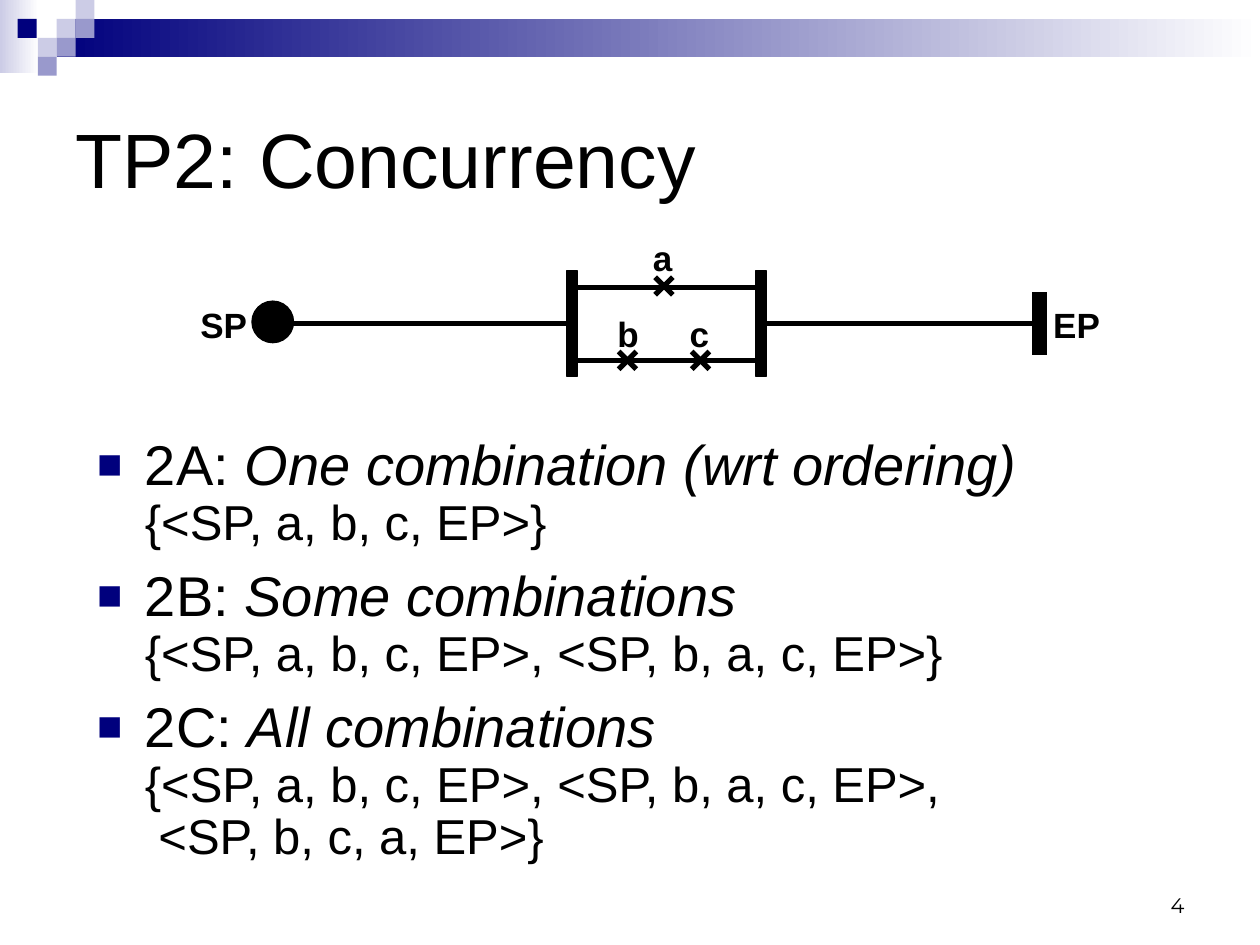
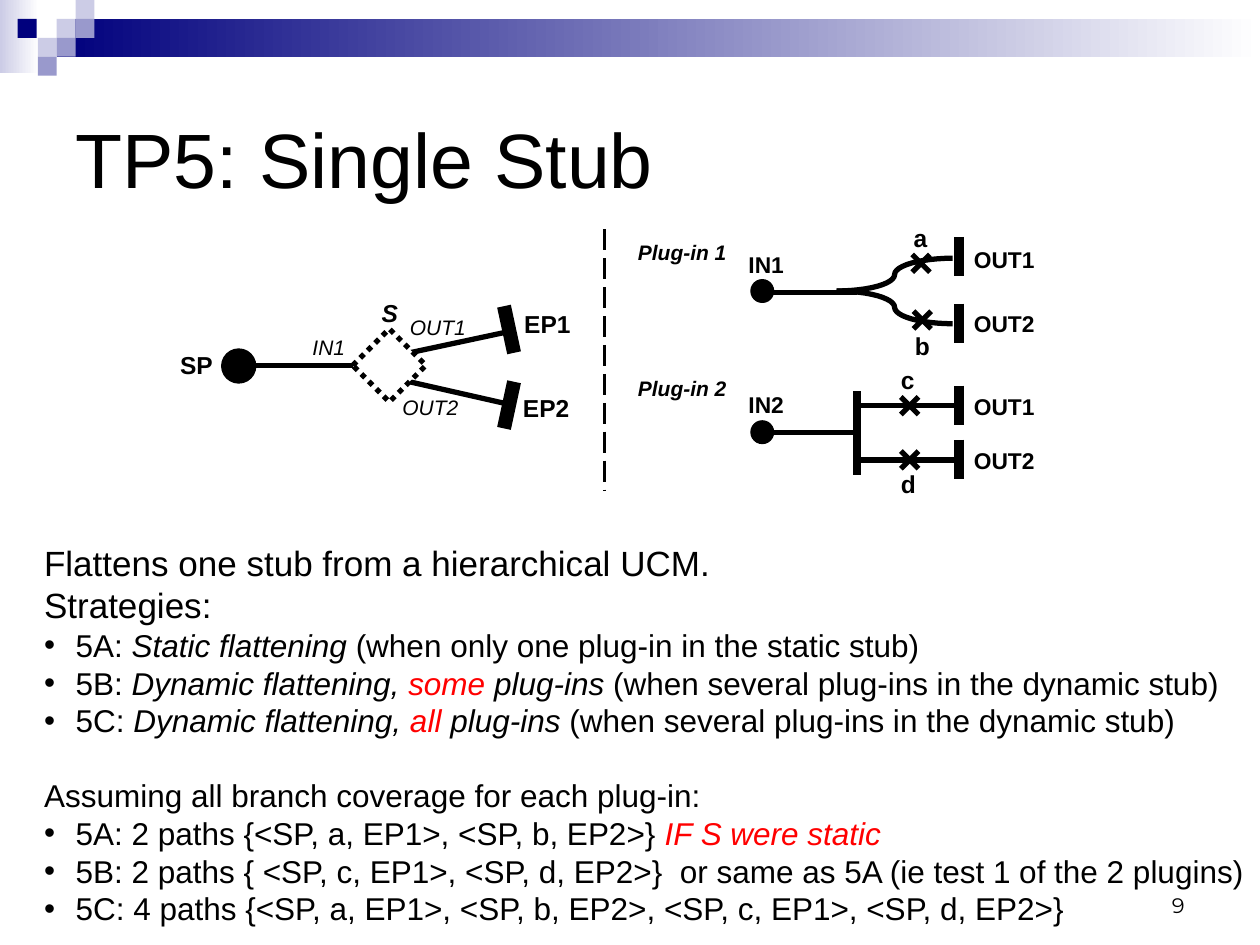
from math import cos, pi, sin

from lxml import etree
from pptx import Presentation
from pptx.dml.color import RGBColor
from pptx.enum.dml import MSO_LINE
from pptx.enum.shapes import MSO_CONNECTOR, MSO_SHAPE
from pptx.enum.text import MSO_ANCHOR, MSO_AUTO_SIZE, PP_ALIGN
from pptx.oxml.ns import qn
from pptx.util import Inches, Pt

NAVY, LILAC, LAVENDER = "00007D", "9999CC", "CCCCE6"
BLACK, WHITE, RED = "000000", "FFFFFF", "FF0000"


def paint(shape, fill, line=None, width=0.75):
    """Fill with one hex colour, or with a pair as a left-to-right gradient."""
    shape.shadow.inherit = False
    if isinstance(fill, tuple):
        shape.fill.gradient()
        shape.fill.gradient_angle = 0
        for stop, color in zip(shape.fill.gradient_stops, fill):
            stop.color.rgb = RGBColor.from_string(color)
    elif fill:
        shape.fill.solid()
        shape.fill.fore_color.rgb = RGBColor.from_string(fill)
    else:
        shape.fill.background()
    if line:
        shape.line.color.rgb = RGBColor.from_string(line)
        shape.line.width = Pt(width)
    else:
        shape.line.fill.background()


def draw_line(slide, x1, y1, x2, y2, width=3):
    connector = slide.shapes.add_connector(
        MSO_CONNECTOR.STRAIGHT, Inches(x1), Inches(y1), Inches(x2), Inches(y2))
    connector.line.color.rgb = RGBColor.from_string(BLACK)
    connector.line.width = Pt(width)
    etree.SubElement(connector.element.spPr, qn("a:effectLst"))
    return connector


presentation = Presentation()
presentation.slide_width, presentation.slide_height = Inches(10), Inches(7.5)
layout = presentation.slide_layouts[1]
concurrency = presentation.slides.add_slide(layout)
stub = presentation.slides.add_slide(layout)

# Band and squares, moved to the slide master
band = [
    (0, 0, 0.31, 0.58, (LAVENDER, WHITE)),
    (0.45, 0.15, 9.55, 0.3, (NAVY, WHITE)),
]
squares = [
    (0.45, 0.15, LAVENDER), (0.6, 0, LAVENDER), (0.6, 0.15, LILAC), (0.3, 0.3, LAVENDER),
    (0.14, 0.15, NAVY), (0.45, 0.3, LILAC), (0.3, 0.45, LILAC),
]
band += [(left, top, 0.15, 0.15, color) for left, top, color in squares]
master_tree = presentation.slide_master.shapes.element
for position, (left, top, width, height, fill) in enumerate(band, 2):
    shape = concurrency.shapes.add_shape(
        MSO_SHAPE.RECTANGLE, Inches(left), Inches(top), Inches(width), Inches(height))
    paint(shape, fill)
    master_tree.insert(position, shape.element)

# Titles and page numbers
for slide, title_text, number in [(concurrency, "TP2: Concurrency", "4"),
                                  (stub, "TP5: Single Stub", "9")]:
    title = slide.shapes.title
    title.left, title.top, title.width, title.height = (
        Inches(0.5), Inches(0.5), Inches(9), Inches(1.5))
    page = slide.shapes.add_textbox(Inches(7.17), Inches(6.83), Inches(2.33), Inches(0.5))
    for box, text, size, font, anchor, align in [
        (title, title_text, 44, "Arial", MSO_ANCHOR.MIDDLE, PP_ALIGN.LEFT),
        (page, number, 12, "Montserrat", MSO_ANCHOR.BOTTOM, PP_ALIGN.RIGHT),
    ]:
        frame = box.text_frame
        frame.text = text
        frame.word_wrap = True
        frame.auto_size = MSO_AUTO_SIZE.NONE
        frame.vertical_anchor = anchor
        paragraph = frame.paragraphs[0]
        paragraph.alignment = align
        paragraph.font.size = Pt(size)
        paragraph.font.name = font

# Lists: each paragraph is (bullet, size, space before, runs);
# each run is (text, style, own size), with styles "i" for italic and "r" for red
combinations = [
    ("■", 28, before, [(label, "", 32), (name, "i", 32), ("\n" + paths, "", None)])
    for before, label, name, paths in [
        (6, "2A: ", "One combination (wrt ordering)", "{<SP, a, b, c, EP>}"),
        (10, "2B: ", "Some combinations", "{<SP, a, b, c, EP>, <SP, b, a, c, EP>}"),
        (10, "2C: ", "All combinations",
         "{<SP, a, b, c, EP>, <SP, b, a, c, EP>,\n <SP, b, c, a, EP>}"),
    ]
]
strategies = [
    (None, 20, 0, [("Flattens one stub from a hierarchical UCM.", "", None)]),
    (None, 20, 0, [("Strategies:", "", None)]),
    ("•", 18, 0, [("5A: ", "", None), ("Static flattening", "i", None),
                  (" (when only one plug-in in the static stub)", "", None)]),
]
for label, amount in [("5B: ", "some "), ("5C: ", "all ")]:
    strategies.append(("•", 18, 0, [
        (label, "", None), ("Dynamic flattening, ", "i", None),
        (amount, "ir", None), ("plug-ins", "i", None),
        (" (when several plug-ins in the dynamic stub)", "", None)]))
strategies += [
    (None, 18, 21, [("Assuming all branch coverage for each plug-in:", "", None)]),
    ("•", 18, 0, [("5A: 2 paths {<SP, a, EP1>, <SP, b, EP2>} ", "", None),
                  ("IF S were static", "ir", None)]),
    ("•", 18, 0, [("5B: 2 paths { <SP, c, EP1>, <SP, d, EP2>}  or same as 5A "
                   "(ie test 1 of the 2 plugins)", "", None)]),
    ("•", 18, 0, [("5C: 4 paths {<SP, a, EP1>, <SP, b, EP2>, <SP, c, EP1>, "
                   "<SP, d, EP2>}", "", None)]),
]
for slide, area, indent, spacing, items in [
    (concurrency, (0.67, 3.42, 8.67, 3.67), 0.38, 0.9, combinations),
    (stub, (0.25, 4.25, 9.75, 3.2), 0.25, 1.0, strategies),
]:
    body = slide.placeholders[1]
    body.left, body.top, body.width, body.height = map(Inches, area)
    frame = body.text_frame
    frame.auto_size = MSO_AUTO_SIZE.NONE
    for index, (bullet, size, before, runs) in enumerate(items):
        paragraph = frame.add_paragraph() if index else frame.paragraphs[0]
        properties = paragraph._p.get_or_add_pPr()
        properties.set("marL", str(Inches(indent)))
        properties.set("indent", str(-Inches(indent)))
        if bullet == "■":
            color = etree.SubElement(properties, qn("a:buClr"))
            etree.SubElement(color, qn("a:srgbClr"), val=NAVY)
            etree.SubElement(properties, qn("a:buSzPct"), val="75000")
        if bullet:
            etree.SubElement(properties, qn("a:buFont"), typeface="Arial")
            etree.SubElement(properties, qn("a:buChar"), char=bullet)
        else:
            etree.SubElement(properties, qn("a:buNone"))
        paragraph.line_spacing = spacing
        paragraph.space_before = Pt(before)
        paragraph.font.size = Pt(size)
        paragraph.font.name = "Arial"
        for text, style, own_size in runs:
            for line_index, line_text in enumerate(text.split("\n")):
                if line_index:
                    paragraph.add_line_break()
                if not line_text:
                    continue
                run = paragraph.add_run()
                run.text = line_text
                if own_size:
                    run.font.size = Pt(own_size)
                if "i" in style:
                    run.font.italic = True
                if "r" in style:
                    run.font.color.rgb = RGBColor.from_string(RED)

# Start points
for slide, left, top, size in [(concurrency, 2, 2.39, 0.33), (stub, 1.76, 2.77, 0.27),
                               (stub, 5.96, 2.22, 0.18), (stub, 5.96, 3.34, 0.18)]:
    dot = slide.shapes.add_shape(
        MSO_SHAPE.OVAL, Inches(left), Inches(top), Inches(size), Inches(size))
    paint(dot, BLACK, BLACK)

# Concurrency: fork and join bars with the paths between them
bars = []
for left in (4.5, 6):
    bar = concurrency.shapes.add_shape(
        MSO_SHAPE.RECTANGLE, Inches(left), Inches(2.15), Inches(0.08), Inches(0.84))
    paint(bar, BLACK, BLACK)
    bars.append(bar)
fork, join = bars
draw_line(concurrency, 2.08, 2.57, 4.5, 2.57).end_connect(fork, 1)
draw_line(concurrency, 6.08, 2.57, 8.25, 2.57).begin_connect(join, 3)
draw_line(concurrency, 8.25, 2.32, 8.25, 2.82, 9)
for y in (2.28, 2.86):
    draw_line(concurrency, 4.58, y, 6, y)

# Stub: outgoing paths and end bars, then the dynamic stub over them
for start_y, end_y, bar_top, bar_bottom in [(2.8, 2.64, 2.43, 2.8), (3.03, 3.2, 3.4, 3.03)]:
    draw_line(stub, 3.25, start_y, 4, end_y)
    draw_line(stub, 4, bar_top, 4.08, bar_bottom, 8)
diamond = stub.shapes.add_shape(
    MSO_SHAPE.DIAMOND, Inches(2.8), Inches(2.61), Inches(0.58), Inches(0.58))
paint(diamond, WHITE, BLACK, 3)
diamond.line.dash_style = MSO_LINE.ROUND_DOT
draw_line(stub, 1.88, 2.9, 2.8, 2.9).end_connect(diamond, 1)
divider = draw_line(stub, 4.8, 1.82, 4.8, 3.9, 1.5)
divider.line.dash_style = MSO_LINE.LONG_DASH

# Plug-in 1: a path that splits into two S-curves
draw_line(stub, 6.13, 2.32, 6.8, 2.32)
quarter = [(0.46 * sin(step * pi / 24), 0.13 * (1 - cos(step * pi / 24))) for step in range(13)]
curve = quarter + [(0.92 - x, 0.26 - y) for x, y in reversed(quarter[:-1])]
for side in (-1, 1):
    points = [(Inches(6.64 + x), Inches(2.31 + side * y)) for x, y in curve]
    builder = stub.shapes.build_freeform(*points[0])
    builder.add_line_segments(points[1:], close=False)
    paint(builder.convert_to_shape(), None, BLACK, 3)

# Plug-in 2: a path that forks into two
draw_line(stub, 6.13, 3.43, 6.8, 3.43)
draw_line(stub, 6.8, 3.77, 6.8, 3.1, 4.5)
for y in (3.22, 3.65):
    draw_line(stub, 6.8, y, 7.63, y)

# End bars of both plug-ins
for top in (1.88, 2.41, 3.06, 3.49):
    draw_line(stub, 7.61, top, 7.61, top + 0.31, 6)

# Responsibility crosses, by centre
for slide, x, y in [
    (concurrency, 5.27, 2.27), (concurrency, 4.98, 2.86), (concurrency, 5.56, 2.86),
    (stub, 7.31, 2.09), (stub, 7.32, 2.54), (stub, 7.22, 3.22), (stub, 7.22, 3.65),
]:
    for rise in (-0.07, 0.07):
        draw_line(slide, x - 0.07, y + rise, x + 0.07, y - rise)

# Labels: slide, size, style ("b" bold, "i" italic), height, then text, left, top, width
label_groups = [
    (concurrency, 20, "b", 0.43, [
        ("a", 5.08, 1.83, 0.36), ("b", 4.8, 2.43, 0.37), ("c", 5.37, 2.43, 0.36),
        ("SP", 1.49, 2.36, 0.57), ("EP", 8.26, 2.36, 0.57)]),
    (stub, 14, "b", 0.33, [
        ("SP", 1.33, 2.73, 0.46), ("EP1", 4.06, 2.4, 0.57), ("EP2", 4.05, 3.07, 0.57),
        ("a", 7.15, 1.72, 0.31), ("b", 7.16, 2.58, 0.32),
        ("c", 7.05, 2.85, 0.31), ("d", 7.05, 3.67, 0.32)]),
    (stub, 14, "bi", 0.33, [("S", 2.93, 2.32, 0.33)]),
    (stub, 12, "i", 0.3, [
        ("IN1", 2.38, 2.61, 0.46), ("OUT1", 3.15, 2.45, 0.65), ("OUT2", 3.09, 3.08, 0.65)]),
    (stub, 12, "bi", 0.3, [("Plug-in 1", 4.96, 1.85, 0.91), ("Plug-in 2", 4.96, 2.93, 0.91)]),
    (stub, 13, "b", 0.32, [
        ("IN1", 5.84, 1.94, 0.48), ("OUT1", 7.63, 1.9, 0.68), ("OUT2", 7.63, 2.41, 0.68),
        ("IN2", 5.84, 3.05, 0.48), ("OUT1", 7.63, 3.07, 0.68), ("OUT2", 7.63, 3.5, 0.68)]),
]
for slide, size, style, height, labels in label_groups:
    for text, left, top, width in labels:
        label = slide.shapes.add_textbox(
            Inches(left), Inches(top), Inches(width), Inches(height))
        frame = label.text_frame
        frame.text = text
        frame.word_wrap = False
        frame.auto_size = MSO_AUTO_SIZE.SHAPE_TO_FIT_TEXT
        paragraph = frame.paragraphs[0]
        paragraph.alignment = PP_ALIGN.CENTER
        paragraph.font.name = "Arial"
        paragraph.font.size = Pt(size)
        paragraph.font.bold = "b" in style
        paragraph.font.italic = "i" in style

presentation.save("out.pptx")
